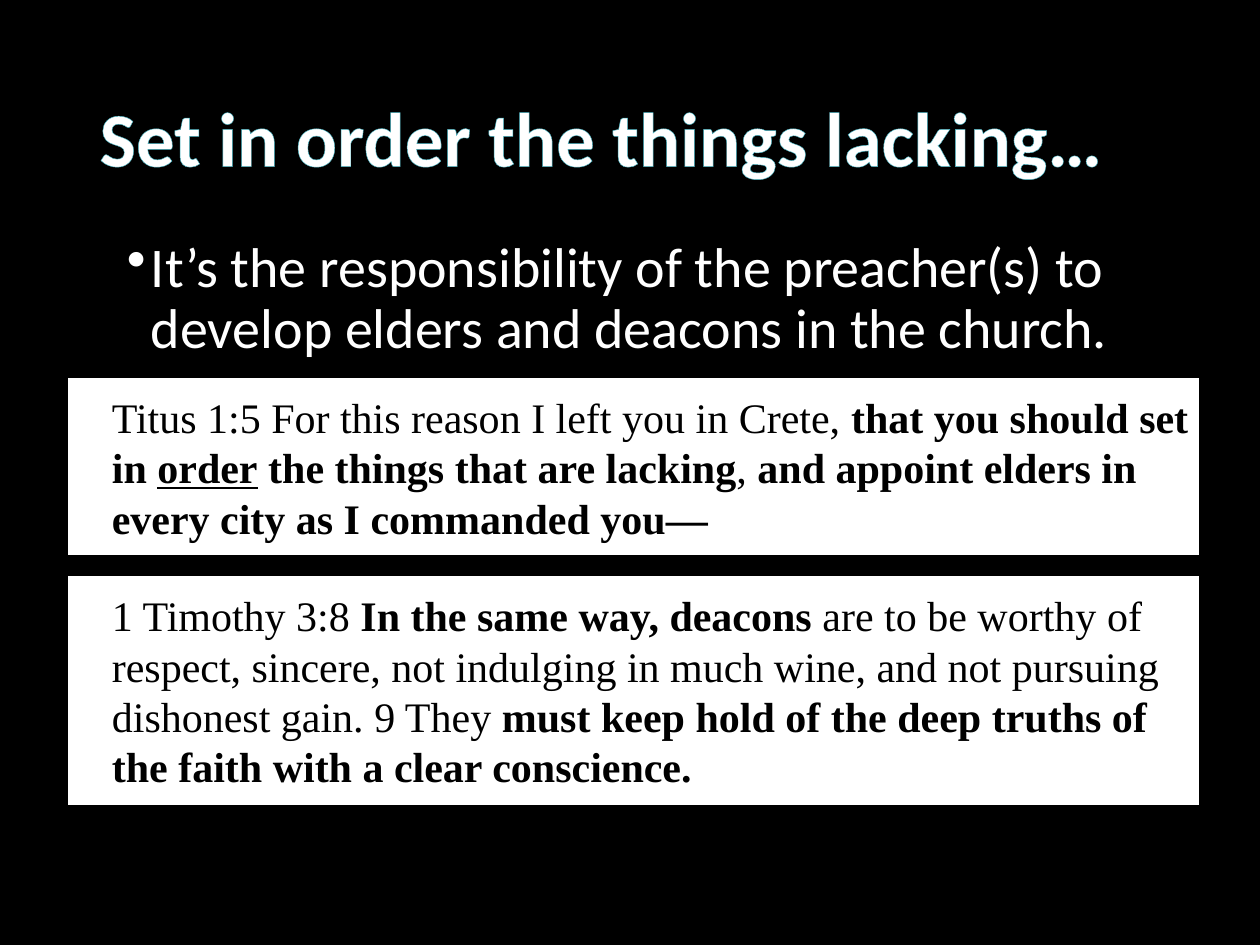
import pptx
import pptx.util
import pptx.dml.color
import pptx.enum.shapes
import pptx.enum.text
import lxml.etree
from pptx.util import Inches

COLORS = {"black": "000000", "white": "FFFFFF", "teal": "41AEBD"}
HEADING = "Set in order the things lacking…"
DUTY = "It’s the responsibility of the preacher(s) to develop elders and deacons in the church."
VERSES = [
    (2.99, 1.43, [
        ("Titus 1:5 For this reason I left you in Crete, ", ""),
        ("that you should set in ", "b"),
        ("order", "bu"),
        (" the things that are lacking", "b"),
        (", ", ""),
        ("and appoint elders in every city as I commanded you—", "b"),
    ]),
    (4.56, 1.84, [
        ("1 Timothy 3:8 ", ""),
        ("In the same way, deacons ", "b"),
        ("are to be worthy of respect, sincere, not indulging in much wine, "
         "and not pursuing dishonest gain. 9 They ", ""),
        ("must keep hold of the deep truths of the faith with a clear conscience.", "b"),
    ]),
]


def rgb(name):
    return pptx.dml.color.RGBColor.from_string(COLORS[name])


def style(paragraph, font_name, size, color):
    paragraph.alignment = pptx.enum.text.PP_ALIGN.LEFT
    paragraph.font.name = font_name
    paragraph.font.size = pptx.util.Pt(size)
    paragraph.font.color.rgb = rgb(color)


def indent(paragraph, left, first=0):
    properties = paragraph._p.get_or_add_pPr()
    properties.set("marL", str(Inches(left)))
    properties.set("indent", str(Inches(first)))
    return properties


def outline_text(run, color, points):
    line = pptx.oxml.parse_xml(
        '<a:ln xmlns:a="http://schemas.openxmlformats.org/drawingml/2006/main" '
        f'w="{pptx.util.Pt(points)}"><a:solidFill><a:srgbClr val="{COLORS[color]}"/>'
        '</a:solidFill></a:ln>')
    run._r.get_or_add_rPr().insert(0, line)


def add_heading(slide):
    heading = slide.shapes.title
    heading.left, heading.top = Inches(0.69), Inches(0.4)
    heading.width, heading.height = Inches(8.62), Inches(1.45)
    heading.text_frame.vertical_anchor = pptx.enum.text.MSO_ANCHOR.MIDDLE
    paragraph = heading.text_frame.paragraphs[0]
    run = paragraph.add_run()
    run.text = HEADING
    style(paragraph, "Calibri", 44, "white")
    paragraph.font.bold = True
    paragraph.line_spacing = 0.9
    outline_text(run, "teal", 0.8)


def add_duty(slide):
    duty = slide.shapes.add_textbox(Inches(0.91), Inches(1.85), Inches(8.04), Inches(4.98))
    duty.text_frame.word_wrap = True
    paragraph = duty.text_frame.paragraphs[0]
    paragraph.text = DUTY
    paragraph.line_spacing = 0.9
    properties = indent(paragraph, 0.19, -0.19)
    bullet = lxml.etree.SubElement(properties, pptx.oxml.ns.qn("a:buChar"))
    bullet.set("char", "•")
    style(paragraph, "Calibri", 32, "white")


def add_verse(slide, top, height, passages):
    verse = slide.shapes.add_shape(
        pptx.enum.shapes.MSO_SHAPE.RECTANGLE,
        Inches(0.53), Inches(top), Inches(9), Inches(height))
    verse.shadow.inherit = False
    verse.fill.solid()
    verse.fill.fore_color.rgb = rgb("white")
    verse.line.color.rgb = rgb("black")
    verse.line.width = pptx.util.Pt(2)
    verse.text_frame.word_wrap = True
    verse.text_frame.vertical_anchor = pptx.enum.text.MSO_ANCHOR.MIDDLE
    paragraph = verse.text_frame.paragraphs[0]
    indent(paragraph, 0.26)
    style(paragraph, "Times New Roman", 24, "black")
    for words, marks in passages:
        run = paragraph.add_run()
        run.text = words
        run.font.bold = "b" in marks
        run.font.underline = "u" in marks


def main():
    deck = pptx.Presentation()
    deck.slide_width, deck.slide_height = Inches(10), Inches(7.5)
    slide = deck.slides.add_slide(deck.slide_layouts[5])
    slide.background.fill.solid()
    slide.background.fill.fore_color.rgb = rgb("black")
    add_heading(slide)
    add_duty(slide)
    for top, height, passages in VERSES:
        add_verse(slide, top, height, passages)
    deck.save("out.pptx")


if __name__ == "__main__":
    main()
